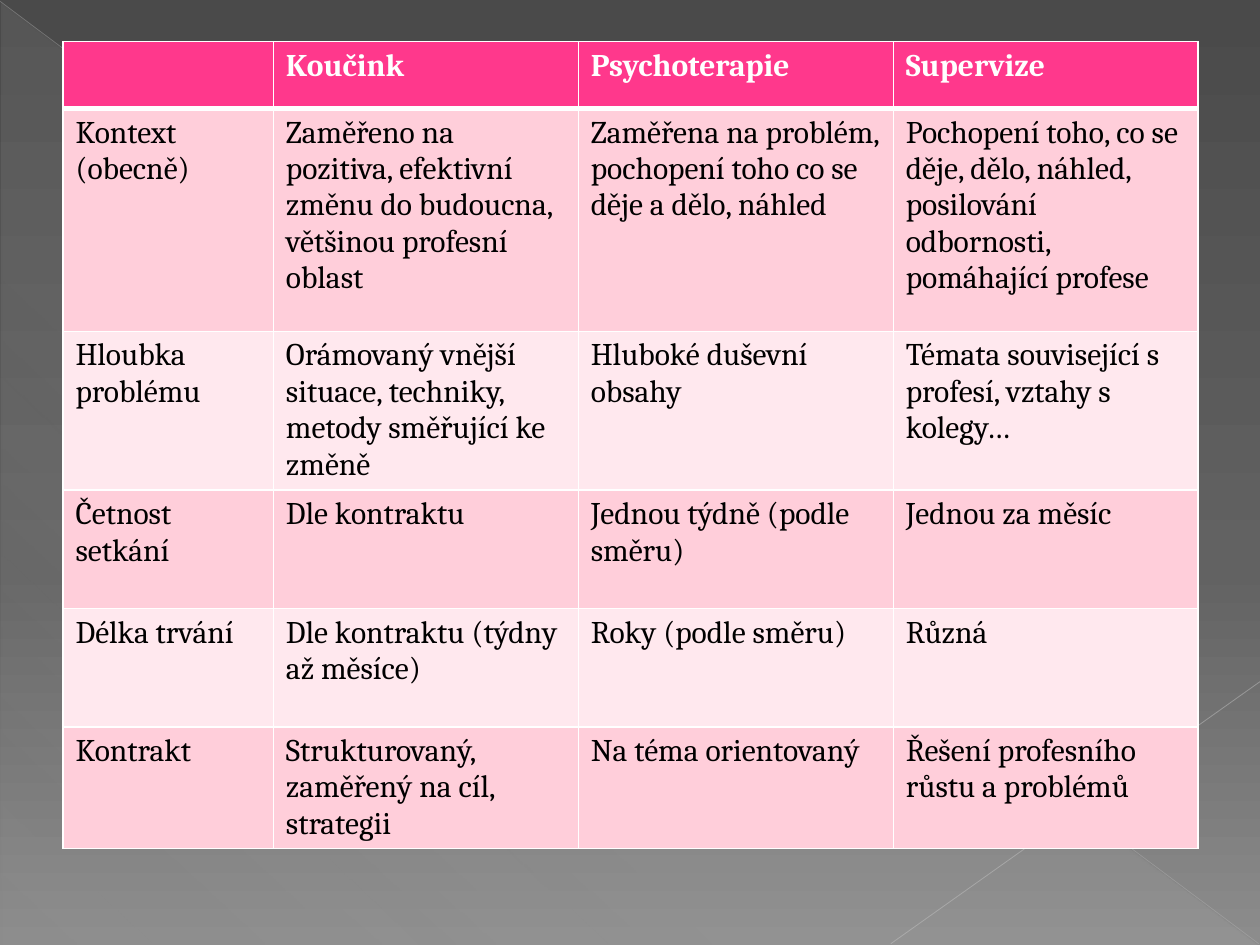
from lxml import etree
from pptx import Presentation
from pptx.dml.color import RGBColor
from pptx.enum.shapes import MSO_CONNECTOR, MSO_SHAPE
from pptx.oxml.ns import qn
from pptx.util import Inches, Pt

# Content
HEADER = ["", "Koučink", "Psychoterapie", "Supervize"]
ROWS = [
    ["Kontext (obecně)",
     "Zaměřeno na pozitiva, efektivní změnu do budoucna, většinou profesní oblast",
     "Zaměřena na problém, pochopení toho co se děje a dělo, náhled",
     "Pochopení toho, co se děje, dělo, náhled, posilování odbornosti, pomáhající profese"],
    ["Hloubka problému",
     "Orámovaný vnější situace, techniky, metody směřující ke změně",
     "Hluboké duševní obsahy",
     "Témata související s profesí, vztahy s kolegy…"],
    ["Četnost setkání", "Dle kontraktu", "Jednou týdně (podle směru)", "Jednou za měsíc"],
    ["Délka trvání", "Dle kontraktu (týdny až měsíce)", "Roky (podle směru)", "Různá"],
    ["Kontrakt", "Strukturovaný, zaměřený na cíl, strategii",
     "Na téma orientovaný", "Řešení profesního růstu a problémů"],
]
COLUMN_WIDTHS = [1.67, 2.42, 2.5, 2.42]
ROW_HEIGHTS = [0.53, 1.77, 1.26, 0.94, 0.94, 0.94]
FONT = "Cambria"
COLORS = {"header": "FF388C", "odd": "FFCEDA", "even": "FFE8EE",
          "white": "FFFFFF", "black": "000000", "sheen": "D2D2D2"}

# Gradient stops: position %, colour, opacity %
BACKGROUND = [(0, "4A4A4A", 100), (60, "626262", 100), (100, "8C8C8C", 100)]
SHEEN = [(0, COLORS["sheen"], 10), (70, COLORS["sheen"], 8), (100, COLORS["sheen"], 1)]
# Lines: start, end, colour, width, opacity %
DIAGONALS = [((0, 0.01), (9.99, 7.49), "BFBFBF", 0.39, 35),
             ((10, 5.41), (7.07, 7.49), "C6C6C6", 0.47, 45)]


def add_alpha(color, opacity):
    etree.SubElement(color, qn("a:alpha"), val=str(opacity * 1000))


def set_gradient(fill, owner, stops, angle):
    fill.gradient()
    fill.gradient_angle = 360 - angle
    stop_list = next(owner.iter(qn("a:gsLst")))
    for old_stop in list(stop_list):
        stop_list.remove(old_stop)
    for position, color, opacity in stops:
        stop = etree.SubElement(stop_list, qn("a:gs"), pos=str(position * 1000))
        add_alpha(etree.SubElement(stop, qn("a:srgbClr"), val=color), opacity)


def set_borders(cell, bottom_width, top_width):
    properties = cell._tc.get_or_add_tcPr()
    widths = {"lnL": 1, "lnR": 1, "lnT": top_width, "lnB": bottom_width}
    for index, (side, width) in enumerate(widths.items()):
        line = etree.Element(qn(f"a:{side}"), w=str(Pt(width)))
        solid = etree.SubElement(line, qn("a:solidFill"))
        etree.SubElement(solid, qn("a:srgbClr"), val=COLORS["white"])
        properties.insert(index, line)


presentation = Presentation()
presentation.slide_width, presentation.slide_height = Inches(10), Inches(7.5)
slide = presentation.slides.add_slide(presentation.slide_layouts[6])

# Background with a faint sheen and diagonals
set_gradient(slide.background.fill, slide.element, BACKGROUND, 90)
sheen = slide.shapes.add_shape(MSO_SHAPE.RIGHT_TRIANGLE, Inches(0.01), Inches(0.02),
                               Inches(9.98), Inches(7.48))
sheen.shadow.inherit = False
sheen.line.fill.background()
set_gradient(sheen.fill, sheen._element, SHEEN, 133)

for start, end, color, width, opacity in DIAGONALS:
    diagonal = slide.shapes.add_connector(
        MSO_CONNECTOR.STRAIGHT, *(Inches(value) for value in start + end))
    diagonal.line.color.rgb = RGBColor.from_string(color)
    diagonal.line.width = Pt(width)
    add_alpha(next(diagonal._element.iter(qn("a:srgbClr"))), opacity)
    etree.SubElement(diagonal._element.spPr, qn("a:effectLst"))

# Comparison table
comparison = slide.shapes.add_table(
    len(ROWS) + 1, len(HEADER), Inches(0.5), Inches(0.33),
    Inches(sum(COLUMN_WIDTHS)), Inches(sum(ROW_HEIGHTS))).table
for column, width in zip(comparison.columns, COLUMN_WIDTHS):
    column.width = Inches(width)
for row, height in zip(comparison.rows, ROW_HEIGHTS):
    row.height = Inches(height)

for r, texts in enumerate([HEADER] + ROWS):
    is_header = r == 0
    band = "header" if is_header else "odd" if r % 2 else "even"
    for c, text in enumerate(texts):
        cell = comparison.cell(r, c)
        cell.fill.solid()
        cell.fill.fore_color.rgb = RGBColor.from_string(COLORS[band])
        set_borders(cell, 3 if is_header else 1, 3 if r == 1 else 1)
        cell.text_frame.text = text
        font = cell.text_frame.paragraphs[0].font
        for run in cell.text_frame.paragraphs[0].runs:
            font = run.font
        font.name, font.size, font.bold = FONT, Pt(18), is_header
        font.color.rgb = RGBColor.from_string(COLORS["white" if is_header else "black"])

presentation.save("out.pptx")
